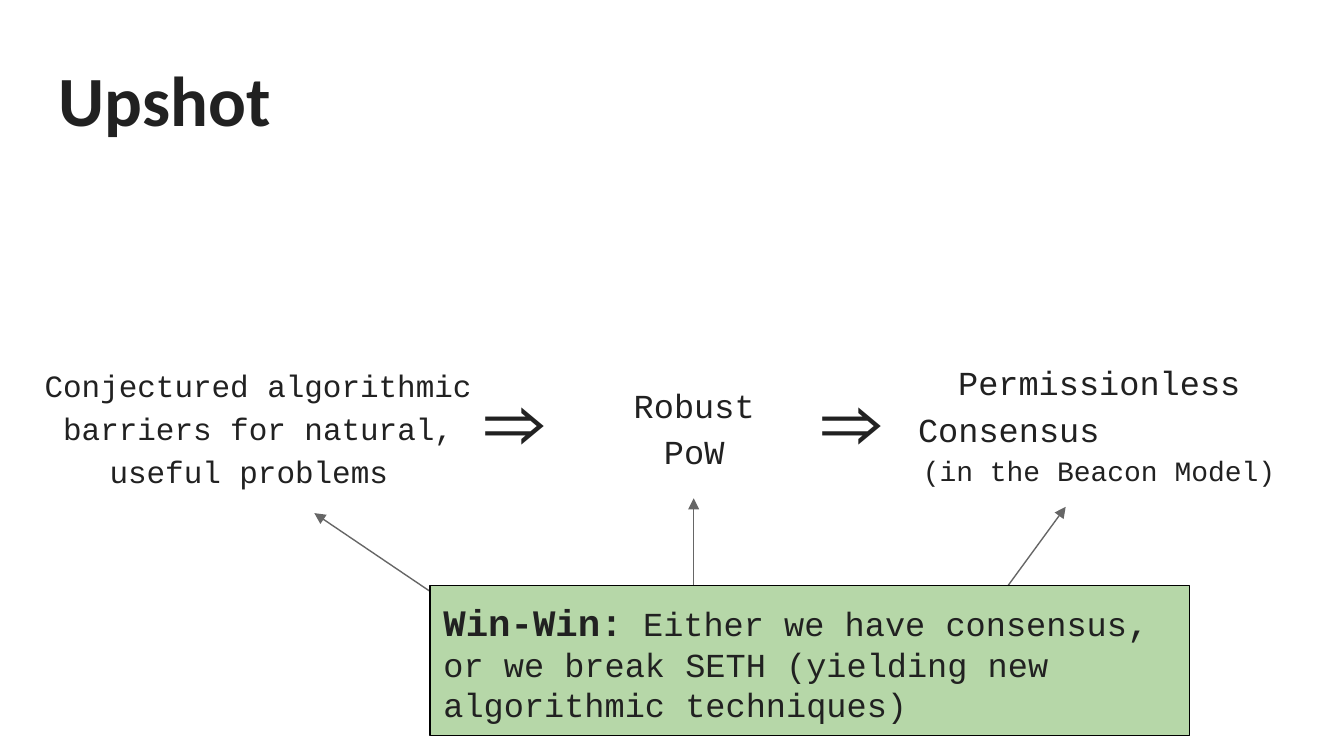
import pptx
import pptx.util
import pptx.dml.color
import pptx.enum.shapes
import pptx.enum.text
import pptx.oxml.ns
import lxml.etree

Cm = pptx.util.Cm
Pt = pptx.util.Pt
PP_ALIGN = pptx.enum.text.PP_ALIGN
MSO_ANCHOR = pptx.enum.text.MSO_ANCHOR
COLORS = {"text": "212121", "arrow": "666666", "box": "B6D7A8", "border": "000000"}
MONO = "Courier New"


def rgb(name):
    return pptx.dml.color.RGBColor.from_string(COLORS[name])


def add_xml(parent, tag, **attrs):
    return lxml.etree.SubElement(parent, pptx.oxml.ns.qn(tag), **attrs)


def place(sp, left, top, width, height):
    sp.left, sp.top, sp.width, sp.height = Cm(left), Cm(top), Cm(width), Cm(height)


def format_frame(tf, anchor):
    tf.word_wrap = True
    tf.auto_size = pptx.enum.text.MSO_AUTO_SIZE.NONE
    tf.vertical_anchor = anchor
    tf.margin_left = tf.margin_right = tf.margin_top = tf.margin_bottom = Cm(0.25)


def format_run(r, size, font=MONO, bold=False):
    r.font.size = Pt(size)
    r.font.name = font
    r.font.bold = bold
    r.font.color.rgb = rgb("text")


def fill_title(sp, text):
    place(sp, 0.86, 0.81, 23.67, 2.24)
    tf = sp.text_frame
    tf.text = text
    format_frame(tf, MSO_ANCHOR.TOP)
    p = tf.paragraphs[0]
    p.alignment = PP_ALIGN.LEFT
    format_run(p.runs[0], 37.8, "Calibri", True)


def fill_body(sp, box, lines):
    place(sp, *box)
    tf = sp.text_frame
    tf.text = "\n".join(text for text, size, indent in lines)
    format_frame(tf, MSO_ANCHOR.MIDDLE)
    for p, (text, size, indent) in zip(tf.paragraphs, lines):
        p.alignment = PP_ALIGN.LEFT if indent else PP_ALIGN.CENTER
        p.line_spacing = 1.15
        p.space_before = p.space_after = Pt(0)
        pPr = p._p.get_or_add_pPr()
        pPr.set("marL", str(Cm(indent)))
        pPr.set("indent", "0")
        add_xml(pPr, "a:buNone")
        format_run(p.runs[0], size)
    tf.paragraphs[-1].space_after = Pt(12)


def add_implies(s, left):
    sp = s.shapes.add_textbox(Cm(left), Cm(7.26), Cm(2.36), Cm(1.4))
    tf = sp.text_frame
    tf.text = "⇒ "
    format_frame(tf, MSO_ANCHOR.MIDDLE)
    p = tf.paragraphs[0]
    p.alignment = PP_ALIGN.CENTER
    format_run(p.runs[0], 40)


def add_arrow(s, *ends):
    line = s.shapes.add_connector(
        pptx.enum.shapes.MSO_CONNECTOR.STRAIGHT, *[Cm(v) for v in ends])
    line.line.color.rgb = rgb("arrow")
    line.line.width = Pt(0.75)
    add_xml(line.line._get_or_add_ln(), "a:tailEnd", type="triangle")
    add_xml(line._element.spPr, "a:effectLst")


def add_win_box(s, parts):
    sp = s.shapes.add_shape(pptx.enum.shapes.MSO_SHAPE.RECTANGLE,
                            Cm(8.13), Cm(11.07), Cm(14.35), Cm(2.84))
    sp.shadow.inherit = False
    sp.fill.solid()
    sp.fill.fore_color.rgb = rgb("box")
    sp.line.color.rgb = rgb("border")
    sp.line.width = Pt(0.75)
    format_frame(sp.text_frame, MSO_ANCHOR.TOP)
    p = sp.text_frame.paragraphs[0]
    p.alignment = PP_ALIGN.LEFT
    for text, size, bold in parts:
        r = p.add_run()
        r.text = text
        format_run(r, size, bold=bold)


def main():
    prs = pptx.Presentation()
    prs.slide_width, prs.slide_height = Cm(25.4), Cm(14.29)
    s = prs.slides.add_slide(prs.slide_layouts.get_by_name("Comparison"))
    title, barriers, pow_body, consensus, spare = s.placeholders
    spare._element.getparent().remove(spare._element)

    fill_title(title, "Upshot")
    fill_body(barriers, (0.53, 6.4, 8.69, 3.28), [
        ("Conjectured algorithmic barriers for natural, useful problems ", 16.6, 0)])
    fill_body(pow_body, (11.48, 6.4, 3.28, 3.28), [("Robust PoW", 18, 0)])
    fill_body(consensus, (16.43, 6.02, 8.69, 3.91), [
        ("Permissionless", 18, 0),
        ("Consensus", 18, 0.67),
        ("(in the Beacon Model)", 15, 0)])

    for left in (8.97, 15.34):
        add_implies(s, left)
    for ends in ((8.13, 11.18, 5.94, 9.7),
                 (13.11, 11.07, 13.11, 9.42),
                 (19.05, 11.07, 20.14, 9.58)):
        add_arrow(s, *ends)
    add_win_box(s, [
        ("Win-Win:", 20, True),
        (" Either we have consensus", 18, False),
        (",", 20, False),
        (" or we break SETH (yielding new algorithmic techniques)", 18, False)])
    prs.save("out.pptx")


if __name__ == "__main__":
    main()
